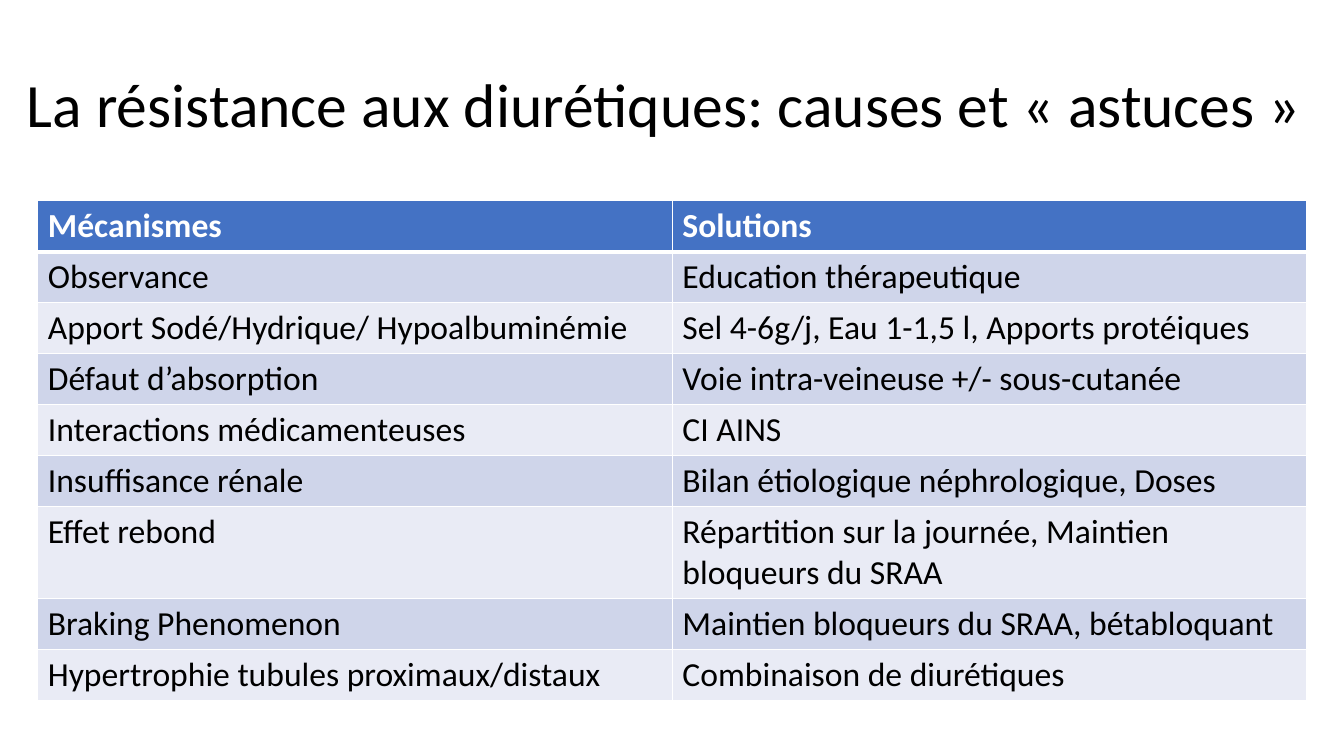
import lxml.etree
import pptx
import pptx.dml.color
import pptx.enum.text
import pptx.oxml.ns
import pptx.util

FONT = "Calibri"
COLOURS = {
    "header": "4472C4",
    "band_dark": "CFD5EA",
    "band_light": "E9EBF5",
    "white": "FFFFFF",
    "black": "000000",
}
TITLE = "La résistance aux diurétiques: causes et « astuces »"
ROWS = [
    ("Mécanismes", "Solutions"),
    ("Observance", "Education thérapeutique"),
    ("Apport Sodé/Hydrique/ Hypoalbuminémie", "Sel 4-6g/j, Eau 1-1,5 l, Apports protéiques"),
    ("Défaut d’absorption", "Voie intra-veineuse +/- sous-cutanée"),
    ("Interactions médicamenteuses", "CI AINS"),
    ("Insuffisance rénale", "Bilan étiologique néphrologique, Doses"),
    ("Effet rebond", "Répartition sur la journée, Maintien bloqueurs du SRAA"),
    ("Braking Phenomenon", "Maintien bloqueurs du SRAA, bétabloquant"),
    ("Hypertrophie tubules proximaux/distaux", "Combinaison de diurétiques"),
]
ROW_HEIGHT = 36.4
TWO_LINE_ROW = 6
TWO_LINE_HEIGHT = 65.8
COLUMN_WIDTH = 453.3


def colour(name):
    """Return the named palette colour."""
    return pptx.dml.color.RGBColor.from_string(COLOURS[name])


def format_text(paragraph, size, colour_name, bold=False):
    """Apply font settings to every run of a paragraph."""
    for run in paragraph.runs:
        run.font.name = FONT
        run.font.size = pptx.util.Pt(size)
        run.font.bold = bold
        run.font.color.rgb = colour(colour_name)


def add_title(slide):
    """Add the slide title, vertically centred."""
    box = slide.shapes.add_textbox(*map(pptx.util.Pt, (12.2, 24.5, 935.3, 104.4)))
    frame = box.text_frame
    frame.word_wrap = True
    frame.vertical_anchor = pptx.enum.text.MSO_ANCHOR.MIDDLE
    frame.text = TITLE
    frame.paragraphs[0].line_spacing = 0.9
    format_text(frame.paragraphs[0], 44, "black")


def add_border(cell, side, width):
    """Draw a white line on one side of a cell."""
    qualify = pptx.oxml.ns.qn
    properties = cell._tc.get_or_add_tcPr()
    line = lxml.etree.SubElement(properties, qualify(f"a:ln{side}"), w=str(pptx.util.Pt(width)))
    fill = lxml.etree.SubElement(line, qualify("a:solidFill"))
    lxml.etree.SubElement(fill, qualify("a:srgbClr"), val=COLOURS["white"])


def fill_cell(cell, text, row_index):
    """Set the text, borders and banded fill of a cell."""
    is_header = row_index == 0
    cell.text = text
    format_text(cell.text_frame.paragraphs[0], 24, "white" if is_header else "black", is_header)
    widths = {"L": 1, "R": 1, "T": 3 if row_index == 1 else 1, "B": 3 if is_header else 1}
    for side, width in widths.items():
        add_border(cell, side, width)
    band = "band_dark" if row_index % 2 else "band_light"
    cell.fill.solid()
    cell.fill.fore_color.rgb = colour("header" if is_header else band)


def add_solutions_table(slide):
    """Add the table of mechanisms and solutions."""
    height = ROW_HEIGHT * (len(ROWS) - 1) + TWO_LINE_HEIGHT
    bounds = map(pptx.util.Pt, (27, 143.5, 2 * COLUMN_WIDTH, height))
    table = slide.shapes.add_table(len(ROWS), 2, *bounds).table
    for column in table.columns:
        column.width = pptx.util.Pt(COLUMN_WIDTH)
    for row_index, texts in enumerate(ROWS):
        row_height = TWO_LINE_HEIGHT if row_index == TWO_LINE_ROW else ROW_HEIGHT
        table.rows[row_index].height = pptx.util.Pt(row_height)
        for column_index, text in enumerate(texts):
            fill_cell(table.cell(row_index, column_index), text, row_index)


def main():
    """Build and save the slide."""
    presentation = pptx.Presentation()
    presentation.slide_width = pptx.util.Pt(960)
    presentation.slide_height = pptx.util.Pt(540)
    slide = presentation.slides.add_slide(presentation.slide_layouts[6])
    add_title(slide)
    add_solutions_table(slide)
    presentation.save("out.pptx")


if __name__ == "__main__":
    main()
